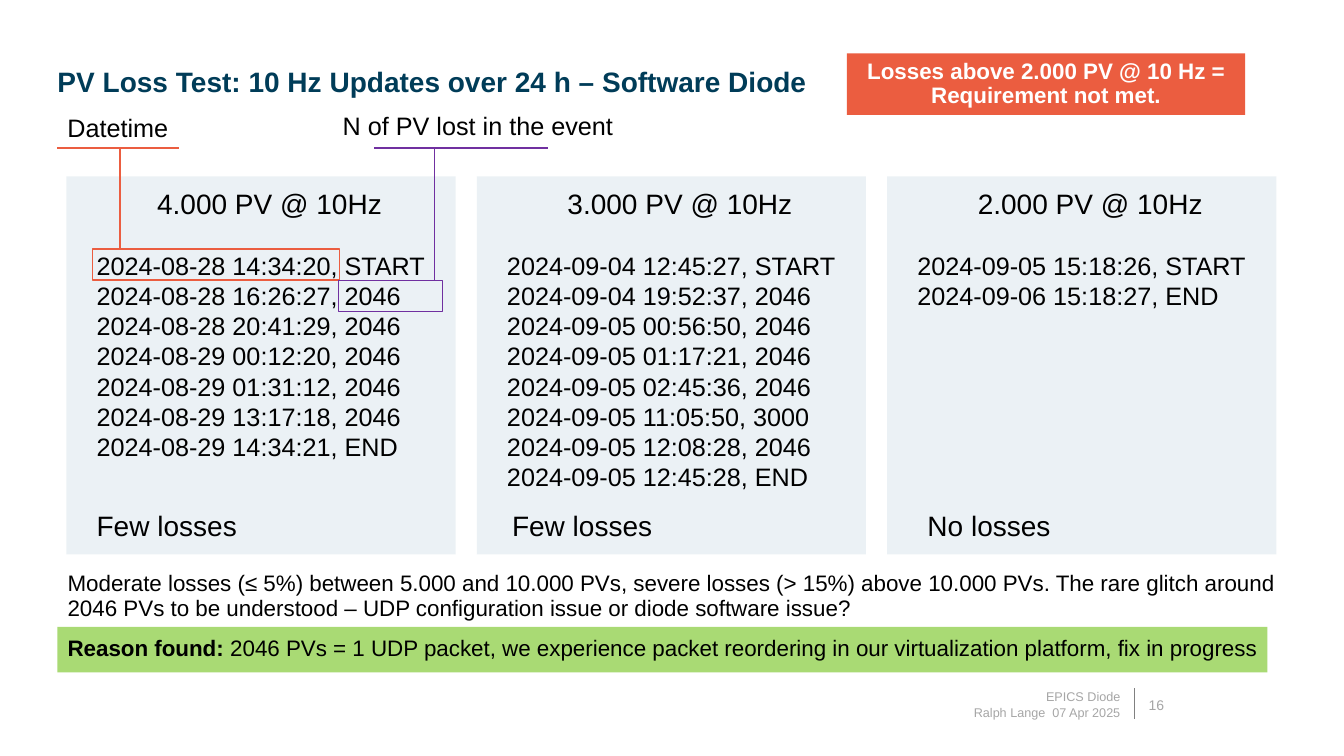
from lxml import etree
from pptx import Presentation
from pptx import util as u
from pptx.dml.color import RGBColor
from pptx.enum import shapes, text
from pptx.oxml import ns

NAVY = RGBColor(0x00, 0x3C, 0x58)
BLACK = RGBColor(0x00, 0x00, 0x00)
WHITE = RGBColor(0xFF, 0xFF, 0xFF)
MIST = RGBColor(0xD9, 0xE5, 0xEC)
GREEN = RGBColor(0xA9, 0xDA, 0x74)
CORAL = RGBColor(0xEB, 0x5D, 0x40)
PURPLE = RGBColor(0x70, 0x30, 0xA0)
GRAY = RGBColor(0x80, 0x80, 0x80)
SILVER = RGBColor(0xA6, 0xA6, 0xA6)

RUNS = [
    ("4.000 PV @ 10Hz", "Few losses", 0.2, [
        "2024-08-28 14:34:20, START",
        "2024-08-28 16:26:27, 2046",
        "2024-08-28 20:41:29, 2046",
        "2024-08-29 00:12:20, 2046",
        "2024-08-29 01:31:12, 2046",
        "2024-08-29 13:17:18, 2046",
        "2024-08-29 14:34:21, END",
    ]),
    ("3.000 PV @ 10Hz", "Few losses", 0.25, [
        "2024-09-04 12:45:27, START",
        "2024-09-04 19:52:37, 2046",
        "2024-09-05 00:56:50, 2046",
        "2024-09-05 01:17:21, 2046",
        "2024-09-05 02:45:36, 2046",
        "2024-09-05 11:05:50, 3000",
        "2024-09-05 12:08:28, 2046",
        "2024-09-05 12:45:28, END",
    ]),
    ("2.000 PV @ 10Hz", "No losses", 0.3, [
        "2024-09-05 15:18:26, START",
        "2024-09-06 15:18:27, END",
    ]),
]
PANEL_LEFT, PANEL_PITCH = 0.66, 4.07


def write(frame, paragraphs, size=18, color=BLACK, bold=False,
          align=text.PP_ALIGN.LEFT, anchor=text.MSO_ANCHOR.TOP, spacing=1.0, after=0):
    """Fill a text frame; a paragraph is a string or a list of (words, bold) runs."""
    frame.word_wrap = True
    frame.auto_size = text.MSO_AUTO_SIZE.NONE
    frame.vertical_anchor = anchor
    for index, content in enumerate(paragraphs):
        paragraph = frame.paragraphs[0] if index == 0 else frame.add_paragraph()
        paragraph.alignment = align
        paragraph.line_spacing = spacing
        paragraph.space_before = u.Pt(0)
        paragraph.space_after = u.Pt(after)
        runs = [(content, bold)] if isinstance(content, str) else content
        for words, heavy in runs:
            run = paragraph.add_run()
            run.text = words
            run.font.name = "Arial"
            run.font.size = u.Pt(size)
            run.font.bold = heavy
            run.font.color.rgb = color


def place(shape, box):
    """Move a placeholder to a box given in inches."""
    shape.left, shape.top, shape.width, shape.height = map(u.Inches, box)


def label(slide, box, paragraphs, **style):
    """Add a text box."""
    write(slide.shapes.add_textbox(*map(u.Inches, box)).text_frame, paragraphs, **style)


def rectangle(slide, box, fill=None, line=None):
    """Add a flat rectangle with an optional fill and outline."""
    rect = slide.shapes.add_shape(shapes.MSO_SHAPE.RECTANGLE, *map(u.Inches, box))
    rect.shadow.inherit = False
    if fill is None:
        rect.fill.background()
    else:
        rect.fill.solid()
        rect.fill.fore_color.rgb = fill
    if line is None:
        rect.line.fill.background()
    else:
        rect.line.color.rgb = line
        rect.line.width = u.Pt(1)
    return rect


def rule(slide, start, end, color, width=1):
    """Add a straight line without shadow."""
    line = slide.shapes.add_connector(
        shapes.MSO_CONNECTOR.STRAIGHT, *map(u.Inches, (*start, *end)))
    line.line.color.rgb = color
    line.line.width = u.Pt(width)
    etree.SubElement(line._element.spPr, ns.qn("a:effectLst"))


def heading(slide, box):
    """Fill the title and add the verdict banner beside it."""
    left, top, width, height = box
    place(slide.shapes.title, (left, top, 8.33, height))
    write(slide.shapes.title.text_frame,
          ["PV Loss Test: 10 Hz Updates over 24 h – Software Diode"],
          size=20, color=NAVY, bold=True, spacing=0.9)
    banner = rectangle(slide, (left + width - 3.95, top - 0.1, 3.95, 0.61), fill=CORAL)
    write(banner.text_frame, ["Losses above 2.000 PV @ 10 Hz = Requirement not met."],
          size=16, color=WHITE, bold=True, align=text.PP_ALIGN.CENTER,
          anchor=text.MSO_ANCHOR.MIDDLE, spacing=0.9)


def panel(slide, box, rate, verdict, verdict_indent, records):
    """Add one test run with its rate, its records and its verdict."""
    left, top, width, height = box
    card = rectangle(slide, box, fill=MIST)
    tint = card._element.spPr.find(".//" + ns.qn("a:srgbClr"))
    etree.SubElement(tint, ns.qn("a:alpha"), val="50000")
    label(slide, (left + 0.8, top + 0.05, 2.5, 0.44), [rate], size=20)
    label(slide, (left + 0.2, top + 0.68, width - 0.21, 0.1 + 0.3 * len(records)), records)
    label(slide, (left + verdict_indent, top + height - 0.5, 2.75, 0.44), [verdict], size=20)


def callout(slide, box, caption, underline, stem, marked, color, align):
    """Add an underlined caption whose stem leads down to a marked field."""
    label(slide, box, [caption], align=align)
    level = 1.47
    rule(slide, (underline[0], level), (underline[1], level), color)
    rectangle(slide, marked, line=color)
    rule(slide, (stem, level), (stem, marked[1]), color)


def conclusions(slide, box):
    """Fill the body with the findings above a highlight for the reason."""
    left, top, width, height = box
    body = slide.placeholders[1]
    place(body, box)
    write(body.text_frame, [
        "Moderate losses (≤ 5%) between 5.000 and 10.000 PVs, severe losses (> 15%) above "
        "10.000 PVs. The rare glitch around 2046 PVs to be understood – UDP configuration "
        "issue or diode software issue?",
        [("Reason found: ", True),
         ("2046 PVs = 1 UDP packet, we experience packet reordering in our virtualization "
          "platform, fix in progress", False)],
    ], size=16, spacing=0.9, after=12)
    for paragraph in body.text_frame.paragraphs:
        properties = paragraph._p.get_or_add_pPr()
        properties.set("marL", "0")
        properties.set("indent", "0")
        etree.SubElement(properties, ns.qn("a:buNone"))
    highlight = rectangle(slide, (left, top + height - 0.45, 12, 0.45), fill=GREEN)
    slide.shapes._spTree.insert(2, highlight._element)


def footer(slide, box):
    """Add the credit, the divider and the page number."""
    left, top, width, height = box
    label(slide, (left, top, 3.17, height), ["EPICS Diode", "Ralph Lange  07 Apr 2025"],
          size=9, color=SILVER, align=text.PP_ALIGN.RIGHT)
    rule(slide, (left + 3.21, top + 0.04), (left + 3.21, top + 0.34), GRAY, width=0.5)
    label(slide, (left + width - 0.5, top + 0.07, 0.5, 0.27), ["16"],
          size=10, color=SILVER, align=text.PP_ALIGN.CENTER)


def main():
    """Build and save the slide."""
    deck = Presentation()
    deck.slide_width, deck.slide_height = u.Inches(13.33), u.Inches(7.5)
    slide = deck.slides.add_slide(deck.slide_layouts[1])
    heading(slide, (0.47, 0.63, 11.88, 0.48))
    for column, run in enumerate(RUNS):
        panel(slide, (PANEL_LEFT + column * PANEL_PITCH, 1.75, 3.86, 3.75), *run)
    callout(slide, (0.57, 1.07, 1.23, 0.4), "Datetime", (0.57, 1.78), 1.19,
            (0.92, 2.47, 2.45, 0.31), CORAL, text.PP_ALIGN.LEFT)
    callout(slide, (2.72, 1.05, 4.04, 0.4), "N of PV lost in the event", (3.71, 5.44), 4.31,
            (3.36, 2.78, 1.03, 0.31), PURPLE, text.PP_ALIGN.CENTER)
    conclusions(slide, (0.57, 5.63, 12.27, 1.04))
    footer(slide, (8.04, 6.79, 3.68, 0.4))
    deck.save("out.pptx")


if __name__ == "__main__":
    main()
